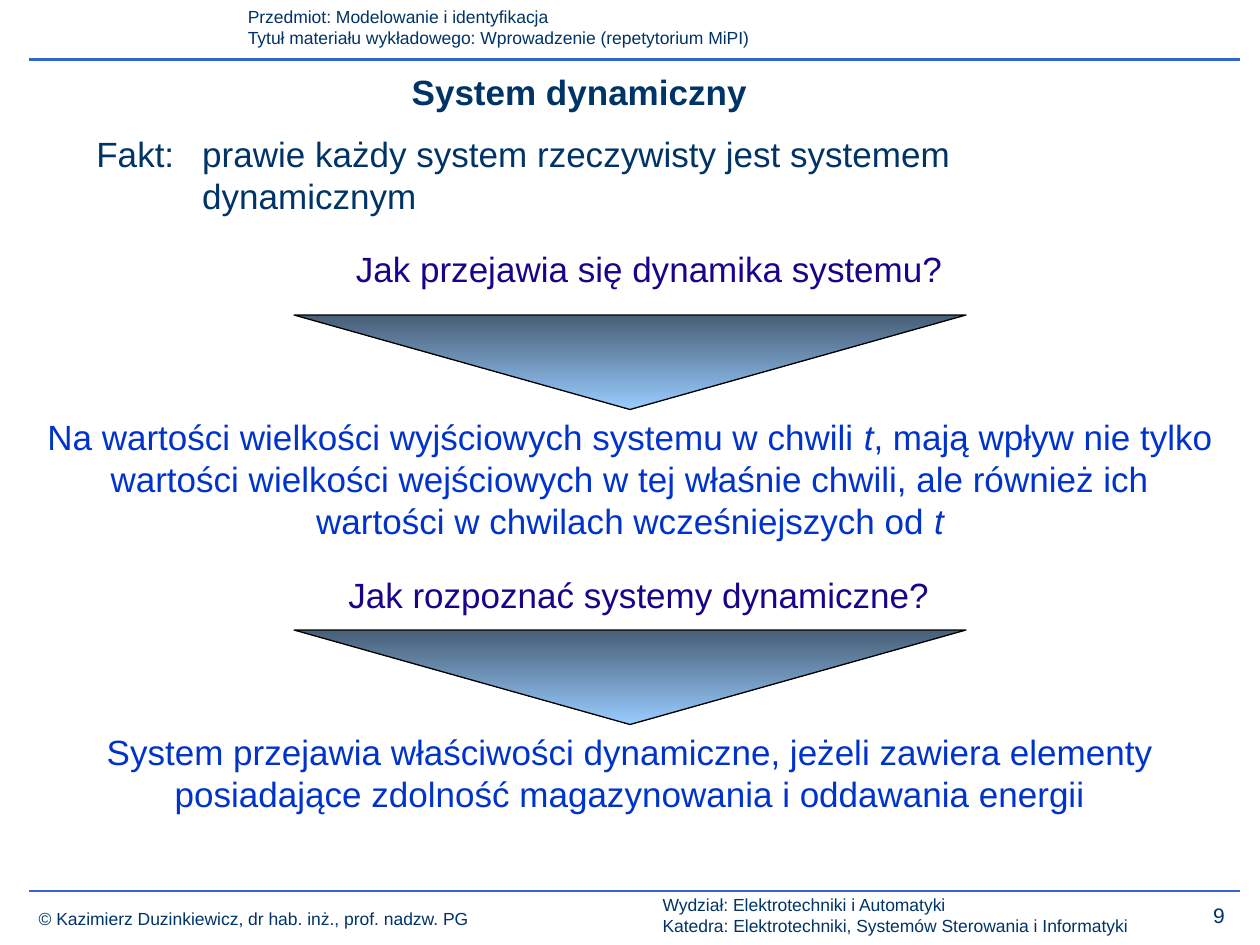
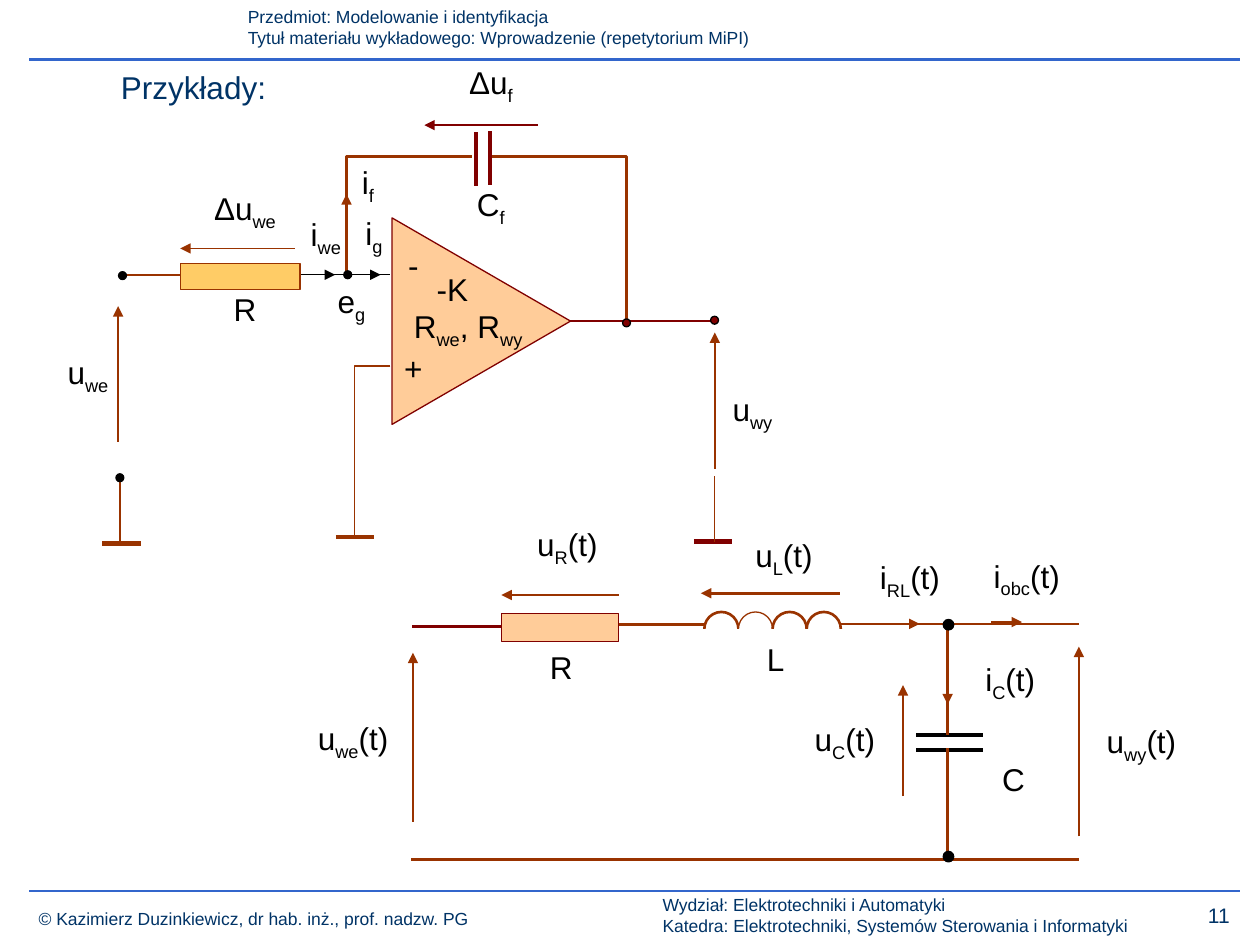
import pptx
import pptx.dml.color
import pptx.enum.shapes
import pptx.enum.text
import pptx.oxml.ns
import pptx.util
from lxml import etree

Pt = pptx.util.Pt
SHAPES = pptx.enum.shapes.MSO_SHAPE
CENTER = pptx.enum.text.PP_ALIGN.CENTER
LEFT = pptx.enum.text.PP_ALIGN.LEFT
qn = pptx.oxml.ns.qn

NAVY = "003366"
RULE_BLUE = "3366CC"
VIOLET = "17048A"
BLUE = "0033CC"
RUST = "993300"
MAROON = "800000"
PEACH = "FFCC99"
AMBER = "FFCC66"
BLACK = "000000"
WHITE = "FFFFFF"


def colour(hex_code):
    return pptx.dml.color.RGBColor.from_string(hex_code)


def set_font(font, size, hex_code):
    font.name = "Arial"
    font.size = Pt(size)
    font.color.rgb = colour(hex_code)


def add_text(page, lines, left, top, width, height, size, hex_code,
             align=LEFT, wrap=True):
    """Add a text box; ~ switches italics and _ switches subscript."""
    box = page.shapes.add_textbox(Pt(left), Pt(top), Pt(width), Pt(height))
    frame = box.text_frame
    frame.word_wrap = wrap
    for number, line in enumerate(lines):
        para = frame.add_paragraph() if number else frame.paragraphs[0]
        para.alignment = align
        set_font(para.font, size, hex_code)
        mark = "~" if "~" in line else "_"
        for index, part in enumerate(line.split(mark)):
            if not part:
                continue
            span = para.add_run()
            span.text = part
            if index % 2 and mark == "~":
                span.font.italic = True
            elif index % 2:
                span.font._element.set("baseline", "-25000")
    return box


def add_line(page, start_x, start_y, end_x, end_y, hex_code=RUST, width=1,
             arrow=False):
    line = page.shapes.add_connector(
        pptx.enum.shapes.MSO_CONNECTOR.STRAIGHT,
        Pt(start_x), Pt(start_y), Pt(end_x), Pt(end_y))
    line.line.color.rgb = colour(hex_code)
    line.line.width = Pt(width)
    properties = line.element.spPr
    if arrow:
        etree.SubElement(properties.find(qn("a:ln")), qn("a:tailEnd"),
                         type="triangle")
    etree.SubElement(properties, qn("a:effectLst"))


def add_shape(page, kind, left, top, width, height, fill, line=None,
              line_width=0.75):
    shape = page.shapes.add_shape(kind, Pt(left), Pt(top), Pt(width),
                                  Pt(height))
    shape.shadow.inherit = False
    shape.fill.solid()
    shape.fill.fore_color.rgb = colour(fill)
    if line:
        shape.line.color.rgb = colour(line)
        shape.line.width = Pt(line_width)
    else:
        shape.line.fill.background()
    return shape


def add_bent_wire(page, points, width):
    (start_x, start_y), *rest = points
    builder = page.shapes.build_freeform(Pt(start_x), Pt(start_y))
    builder.add_line_segments([(Pt(x), Pt(y)) for x, y in rest], close=False)
    wire = builder.convert_to_shape()
    wire.shadow.inherit = False
    wire.fill.background()
    wire.line.color.rgb = colour(RUST)
    wire.line.width = Pt(width)


def add_dot(page, center_x, center_y, size, fill=BLACK):
    add_shape(page, SHAPES.OVAL, center_x - size / 2, center_y - size / 2,
              size, size, fill, BLACK)


def add_ground(page, center_x, y, hex_code=RUST):
    add_line(page, center_x - 11, y, center_x + 11, y, hex_code, 2.5)


def add_labels(page, labels):
    for text, *place in labels:
        add_text(page, [text], *place, 18, BLACK, CENTER)


def add_down_triangle(page, top):
    triangle = add_shape(page, SHAPES.FLOWCHART_MERGE, 168, top, 384, 54,
                         WHITE, BLACK)
    triangle.fill.gradient()
    triangle.fill.gradient_angle = 270
    stops = triangle.fill.gradient_stops
    for stop, position, shade in zip(stops, (0, 1), ("475E76", "99CCFF")):
        stop.position = position
        stop.color.rgb = colour(shade)


def add_page(deck, number):
    """Add a blank slide with the lecture header, footer and number."""
    page = deck.slides.add_slide(deck.slide_layouts[6])
    add_text(page, ["Przedmiot: Modelowanie i identyfikacja",
                    "Tytuł materiału wykładowego: Wprowadzenie "
                    "(repetytorium MiPI)"],
             134.5, 0, 585.5, 31.5, 10, NAVY)
    for y in (34, 509.3):
        add_line(page, 16.8, y, 708.5, y, RULE_BLUE, 1.25)
    add_text(page, ["© Kazimierz Duzinkiewicz, dr hab. inż., prof. nadzw. PG"],
             15, 515.5, 289.5, 19.5, 10, NAVY)
    add_text(page, ["Wydział: Elektrotechniki i Automatyki",
                    "Katedra: Elektrotechniki, Systemów Sterowania "
                    "i Informatyki"],
             371.5, 507.5, 320.5, 31.5, 10, NAVY)
    add_text(page, [str(number)], 673, 512, 47, 21.5, 12, NAVY, CENTER)
    return page


def add_dynamic_system(deck):
    page = add_page(deck, 9)
    title = add_text(page, ["System dynamiczny"], 228.2, 37, 207.5, 31.5,
                     20, NAVY, wrap=False)
    title.text_frame.paragraphs[0].font.bold = True
    fact = add_text(page, ["Fakt:\tprawie każdy system rzeczywisty jest "
                           "systemem dynamicznym"],
                    48, 72, 624, 31.5, 20, NAVY)
    indent = fact.text_frame.paragraphs[0]._p.get_or_add_pPr()
    indent.set("marL", str(Pt(60.5)))
    indent.set("indent", str(Pt(-60.5)))

    steps = [
        ("Jak przejawia się dynamika systemu?", 174, 138, 180,
         "Na wartości wielkości wyjściowych systemu w chwili ~t~, mają wpływ "
         "nie tylko wartości wielkości wejściowych w tej właśnie chwili, ale "
         "również ich wartości w chwilach wcześniejszych od ~t~", 80),
        ("Jak rozpoznać systemy dynamiczne?", 168, 324, 360,
         "System przejawia właściwości dynamiczne, jeżeli zawiera elementy "
         "posiadające zdolność magazynowania i oddawania energii", 55.5),
    ]
    for question, left, top, triangle_top, answer, height in steps:
        add_text(page, [question], left, top, 394, 31.5, 20, VIOLET, CENTER)
        add_down_triangle(page, triangle_top)
        add_text(page, [answer], 18, triangle_top + 54, 684, height, 20,
                 BLUE, CENTER)


def draw_amplifier(page):
    amplifier = add_shape(page, SHAPES.ISOSCELES_TRIANGLE,
                          216, 132.5, 118, 102, PEACH, MAROON)
    amplifier.rotation = 90
    add_ground(page, 69.5, 310.5)
    add_ground(page, 203, 306.7)
    add_ground(page, 407.5, 309.5, MAROON)
    add_bent_wire(page, [(223, 209), (202.5, 209), (202.5, 307.5)], 1)
    add_bent_wire(page, [(198, 157), (198, 89.5), (270, 89.5)], 1.5)
    add_bent_wire(page, [(280, 89.5), (358, 89.5), (358, 184.5)], 1.5)
    wires = [
        (70, 157, 111.5, 157),
        (171.5, 157, 223, 157, BLACK, 0.75),
        (325.5, 183.5, 407, 183.5, MAROON, 0.75),
        (68.5, 309.5, 68.5, 272),
        (408.5, 309.5, 408.5, 272, RUST, 0.75),
        (272, 75.5, 272, 106.5, MAROON, 2.5),
        (280, 75, 280, 106, MAROON, 2.5),
    ]
    arrows = [
        (178.5, 157, 191.5, 157, BLACK, 0.75),
        (205, 157, 217.5, 157, BLACK, 0.75),
        (67.5, 252.5, 67.5, 175),
        (408.5, 268, 408.5, 190),
        (198, 123, 198, 111, RUST, 0.75),
        (307.5, 71.5, 242.5, 71.5, MAROON),
        (168.5, 142, 103, 142),
    ]
    for wire in wires:
        add_line(page, *wire)
    for arrow in arrows:
        add_line(page, *arrow, arrow=True)
    for x, y in [(198.7, 157), (68.5, 273), (70, 157.5)]:
        add_dot(page, x, y, 4.5)
    for x, y in [(358, 184.5), (408.3, 183)]:
        add_dot(page, x, y, 4.5, MAROON)
    add_shape(page, SHAPES.RECTANGLE, 103, 150.5, 68.5, 15, AMBER, RUST)
    add_labels(page, [
        ("Δu_f", 248.5, 32.5, 64, 44),
        ("-", 217.5, 137, 37.5, 28),
        ("+", 217.5, 196, 37.5, 28),
        ("C_f", 256.5, 102, 48, 44.5),
        ("R", 118, 162, 44, 28),
        ("i_we", 162.5, 119.5, 47.5, 28),
        ("i_g", 192.5, 119, 42.5, 37.5),
        ("i_f", 186.5, 89.5, 47.5, 28),
        ("e_g", 182, 157.5, 37.5, 32.5),
        ("u_we", 23, 198, 54.5, 44),
        ("u_wy", 398, 219.5, 64, 47),
        ("Δu_we", 108, 104.5, 64, 44),
        ("-K", 234.5, 151, 48, 28),
        ("R_we_, R_wy", 210, 172, 115, 28),
    ])


def draw_coil(page):
    """Draw four loops whose lower halves are hidden by a white bar."""
    for number, width in enumerate((1.5, 0.75, 1.5, 1.5)):
        add_shape(page, SHAPES.OVAL, 402.5 + 19.5 * number, 349.7, 19.5, 19.5,
                  WHITE, RUST, width)
    add_shape(page, SHAPES.RECTANGLE, 397.5, 359.5, 85.5, 12, WHITE)


def draw_rlc_circuit(page):
    for y in (428.5, 420):
        add_line(page, 523.5, y, 561.5, y, BLACK, 2.5)
    draw_coil(page)
    add_shape(page, SHAPES.RECTANGLE, 286.5, 350.5, 67, 16, PEACH, MAROON)
    add_line(page, 286.5, 358, 235.5, 358, MAROON, 1.5)
    wires = [
        (402.5, 357, 354, 357),
        (480, 356.5, 616.5, 356.5),
        (541.5, 420, 541.5, 356.5),
        (541.5, 491, 541.5, 427.5),
        (235, 491, 616.5, 491),
    ]
    arrows = [
        (236, 469.5, 236, 373),
        (353.5, 340, 286.5, 340),
        (480, 339, 400.5, 339),
        (516, 455, 516, 391.5),
        (616.5, 478, 616.5, 369.5),
        (506, 356.5, 525.5, 356.5),
        (566.5, 355.5, 584, 355.5),
        (541.5, 381.5, 541.5, 402.5),
    ]
    for wire in wires:
        add_line(page, *wire, width=1.5)
    for arrow in arrows:
        add_line(page, *arrow, width=1.5, arrow=True)
    for y in (357, 489.5):
        add_dot(page, 542, y, 6)
    add_labels(page, [
        ("u_we_(t)", 158.5, 407.5, 86.5, 37.5),
        ("u_wy_(t)", 617, 409, 70.5, 41),
        ("u_R_(t)", 286.5, 296.5, 75.5, 49.5),
        ("u_L_(t)", 403, 303, 90, 37.5),
        ("u_C_(t)", 445, 408, 75.5, 41),
        ("i_RL_(t)", 485.5, 315.5, 69, 28),
        ("i_obc_(t)", 546.5, 314.5, 80.5, 41),
        ("i_C_(t)", 540.5, 373.5, 73.5, 36),
        ("R", 303, 366.5, 35.5, 28),
        ("L", 425.5, 362, 35.5, 28),
        ("C", 561.5, 430.5, 35.5, 28),
    ])


def add_examples(deck):
    page = add_page(deck, 11)
    add_text(page, ["Przykłady:"], 62, 35.5, 128, 29, 18, NAVY)
    draw_amplifier(page)
    draw_rlc_circuit(page)


def main():
    deck = pptx.Presentation()
    deck.slide_width = Pt(720)
    deck.slide_height = Pt(540)
    add_dynamic_system(deck)
    add_examples(deck)
    deck.save("out.pptx")


if __name__ == "__main__":
    main()
